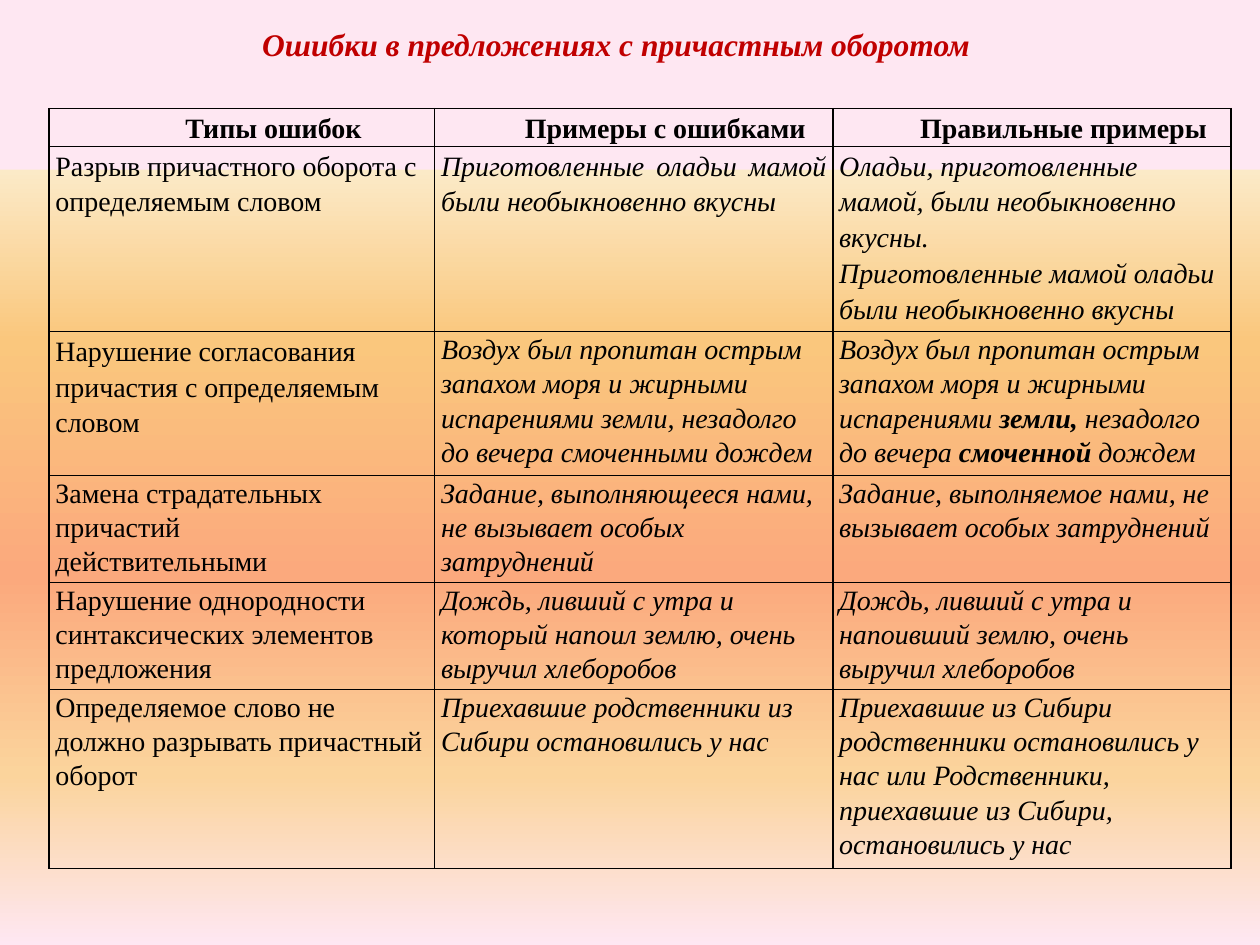
from lxml.etree import SubElement
from pptx import Presentation
from pptx.dml.color import RGBColor
from pptx.enum.text import MSO_ANCHOR as ANCHOR, PP_ALIGN as ALIGN
from pptx.oxml.ns import qn
from pptx.util import Inches, Pt

RED = RGBColor(0xC0, 0x00, 0x00)
BLACK = RGBColor(0x00, 0x00, 0x00)
PINK = RGBColor(0xFE, 0xE7, 0xF2)
CREAM = RGBColor(0xFB, 0xEA, 0xC7)
AMBER = RGBColor(0xFA, 0xC7, 0x7D)
CORAL = RGBColor(0xFB, 0xA9, 0x7D)
SAND = RGBColor(0xFB, 0xD4, 0x9C)

STOPS = [(17.9, PINK), (18, CREAM), (36, AMBER), (61, CORAL), (82, SAND), (100, PINK)]
COLUMNS = [3.06, 3.16, 3.16]
HEIGHTS = [0.3, 1.47, 1.14, 0.85, 0.85, 1.42]
WIDE, TIGHT = 1.15, 1.1
ROWS = [
    ["Типы ошибок", "Примеры с ошибками", "Правильные примеры"],
    ["Разрыв причастного оборота с определяемым словом",
     "Приготовленные оладьи мамой были необыкновенно вкусны",
     "Оладьи, приготовленные мамой, были необыкновенно вкусны.\n"
     "Приготовленные мамой оладьи были необыкновенно вкусны"],
    ["Нарушение согласования причастия с определяемым словом",
     "Воздух был пропитан острым запахом моря и жирными испарениями земли, "
     "незадолго до вечера смоченными дождем",
     "Воздух был пропитан острым запахом моря и жирными испарениями *земли,* "
     "незадолго до вечера* смоченной* дождем"],
    ["Замена страдательных причастий\nдействительными",
     "Задание, выполняющееся нами, не вызывает особых затруднений",
     "Задание, выполняемое нами, не вызывает особых затруднений"],
    ["Нарушение однородности\nсинтаксических элементов\nпредложения",
     "Дождь, ливший с утра и который напоил землю, очень выручил хлеборобов",
     "Дождь, ливший с утра и напоивший землю, очень выручил хлеборобов"],
    ["Определяемое слово не должно разрывать причастный оборот",
     "Приехавшие родственники из Сибири остановились у нас",
     "Приехавшие из Сибири родственники остановились у нас или Родственники, "
     "приехавшие из Сибири, остановились у нас"],
]


class Deck:
    """Holds the text style and the slide being built."""

    font = "Times New Roman"

    def __init__(self, prs):
        self.w, self.h = prs.slide_width, prs.slide_height
        self.s = prs.slides.add_slide(prs.slide_layouts[5])

    def box(self, x, y, w, h):
        return int(x * self.w), int(y * self.h), int(w * self.w), int(h * self.h)

    def run(self, p, text, size, color, bold=False, italic=False):
        r = p.add_run()
        r.text = text
        f = r.font
        f.name, f.size, f.bold, f.italic = self.font, Pt(size), bold, italic
        f.color.rgb = color

    def background(self, stops):
        fill = self.s.background.fill
        fill.gradient()
        fill.gradient_angle = 270
        gs_list = self.s.element.find(".//" + qn("a:gsLst"))
        for gs in list(gs_list):
            gs_list.remove(gs)
        for pos, color in stops:
            gs = SubElement(gs_list, qn("a:gs"), pos=str(round(pos * 1000)))
            SubElement(gs, qn("a:srgbClr"), val=str(color))

    def title(self, text, *share):
        sp = self.s.shapes.title
        sp.left, sp.top, sp.width, sp.height = self.box(*share)
        tf = sp.text_frame
        tf.vertical_anchor = ANCHOR.MIDDLE
        p = tf.paragraphs[0]
        p.alignment = ALIGN.CENTER
        self.run(p, text, 18, RED, True, True)

    def border(self, cell):
        tc_pr = cell._tc.get_or_add_tcPr()
        for side in ("L", "R", "T", "B"):
            ln = SubElement(tc_pr, qn("a:ln" + side), w=str(Pt(1)))
            fill = SubElement(ln, qn("a:solidFill"))
            SubElement(fill, qn("a:srgbClr"), val=str(BLACK))

    def cell(self, cell, text, align, spacing, header, italic):
        self.border(cell)
        cell.fill.background()
        cell.margin_left = cell.margin_right = Inches(0.05)
        cell.margin_top = cell.margin_bottom = 0
        tf = cell.text_frame
        for i, line in enumerate(text.split("\n")):
            p = tf.add_paragraph() if i else tf.paragraphs[0]
            p.alignment, p.line_spacing = align, spacing
            if header:
                p._p.get_or_add_pPr().set("marL", str(Inches(0.5)))
            for k, part in enumerate(line.split("*")):
                self.run(p, part, 16, BLACK, header or k % 2 == 1, italic)

    def table(self, rows, columns, heights, *share):
        tbl = self.s.shapes.add_table(len(rows), len(columns), *self.box(*share)).table
        tbl.first_row = tbl.horz_banding = False
        for col, width in zip(tbl.columns, columns):
            col.width = Inches(width)
        for row, height in zip(tbl.rows, heights):
            row.height = Inches(height)
        for i, texts in enumerate(rows):
            for j, text in enumerate(texts):
                header = i == 0
                align = ALIGN.CENTER if header else ALIGN.LEFT
                if (i, j) == (1, 1):
                    align = ALIGN.JUSTIFY
                spacing = WIDE if i < 2 or (i, j) == (2, 0) else TIGHT
                self.cell(tbl.cell(i, j), text, align, spacing, header, not header and j > 0)


def main():
    prs = Presentation()
    prs.slide_width, prs.slide_height = Inches(10), Inches(7.5)
    deck = Deck(prs)
    deck.background(STOPS)
    deck.title("Ошибки в предложениях с причастным оборотом", 0.039, 0, 0.9, 0.093)
    deck.table(ROWS, COLUMNS, HEIGHTS, 0.039, 0.115, 0.938, 0.804)
    prs.save("out.pptx")


if __name__ == "__main__":
    main()
